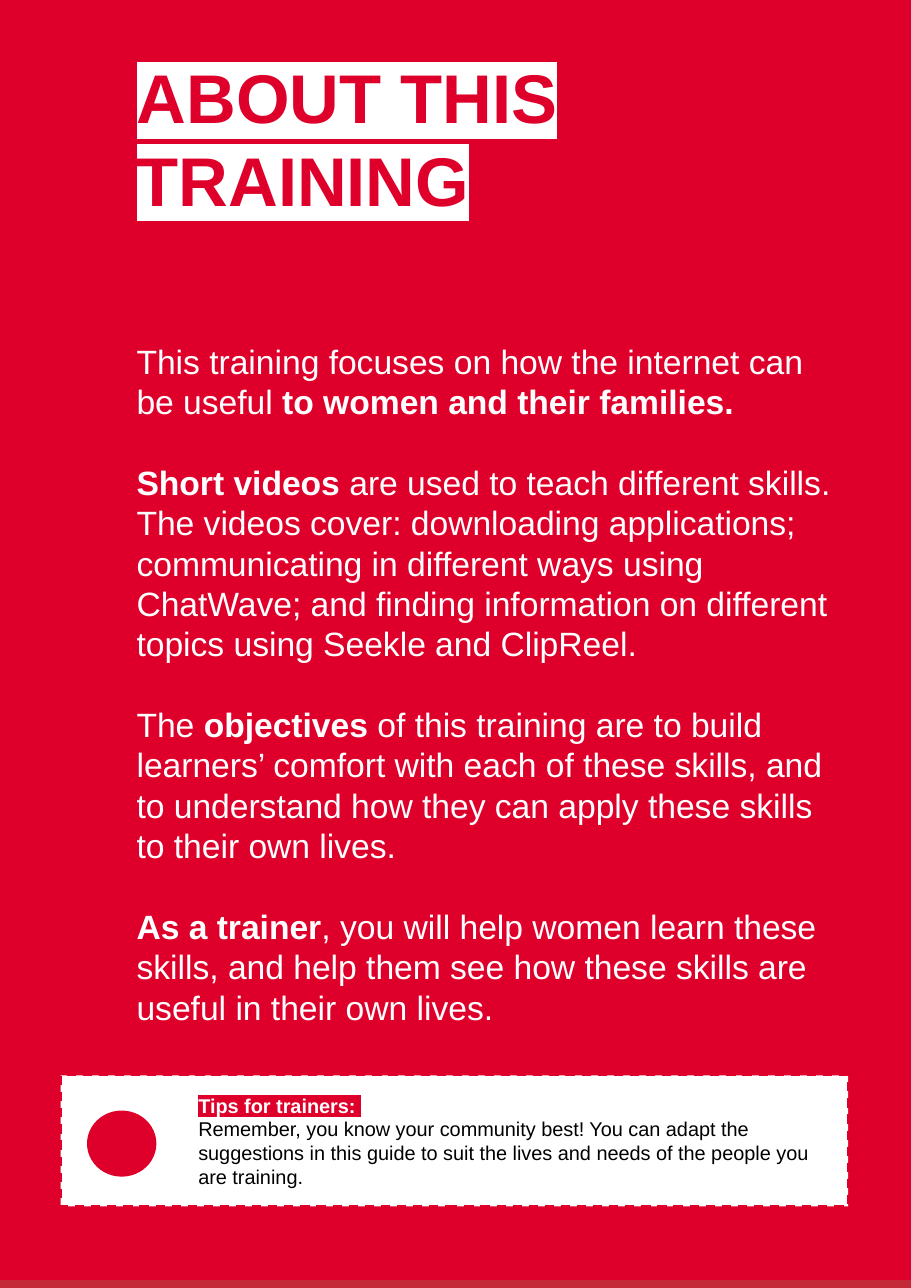
from lxml import etree
from pptx import Presentation
from pptx.dml.color import RGBColor
from pptx.enum.dml import MSO_LINE_DASH_STYLE as Dash
from pptx.enum.shapes import MSO_SHAPE as Shape
from pptx.enum.text import MSO_ANCHOR as Anchor, MSO_AUTO_SIZE as AutoSize, PP_ALIGN as Align
from pptx.oxml.ns import qn
from pptx.util import Pt

# Content: each paragraph is a list of (text, bold) pieces
TITLE = "ABOUT THIS TRAINING"
ABOUT = [
    [("This training focuses on how the internet can be useful ", False),
     ("to women and their families.", True)],
    [("Short videos", True),
     (" are used to teach different skills. The videos cover: downloading applications; "
      "communicating in different ways using ChatWave; and finding information on "
      "different topics using Seekle and ClipReel.", False)],
    [("The ", False), ("objectives", True),
     (" of this training are to build learners’ comfort with each of these skills, and to "
      "understand how they can apply these skills to their own lives.", False)],
    [("As a trainer", True),
     (", you will help women learn these skills, and help them see how these skills are "
      "useful in their own lives.", False)],
]
TIPS_LABEL = "Tips for trainers: "
TIPS = ("Remember, you know your community best! You can adapt the suggestions in this "
        "guide to suit the lives and needs of the people you are training.")


class Theme:
    font = "Arial"
    red, dark_red, white, black = "DE002B", "C42938", "FFFFFF", "000000"
    title, body, tips = 45, 22, 13
    body_gap = 26.4
    dash_width = 1.5


# Layout in px, 100 px to the inch
PX = 9144
PAGE_W, PAGE_H = 827, 1169
STRIP_H = 7
TEXT_X, TEXT_W = 115, 657
TITLE_Y, TITLE_H = 41, 170
ABOUT_Y, ABOUT_H = 300, 648
TIPS_BOX = (55, 976, 715, 119)
TIPS_DOT = (79, 1008, 63, 60)
TEXT_INSET, TIPS_INSET, TIPS_INDENT = 9, 11, 114


def color(value):
    return RGBColor.from_string(value)


def emu(*lengths):
    return [length * PX for length in lengths]


def set_insets(frame, inset):
    frame.word_wrap = True
    frame.margin_left = frame.margin_right = inset * PX
    frame.margin_top = frame.margin_bottom = inset * PX


def add_block(slide, kind, box, fill):
    block = slide.shapes.add_shape(kind, *emu(*box))
    block.shadow.inherit = False
    block.fill.solid()
    block.fill.fore_color.rgb = color(fill)
    block.line.fill.background()
    return block


def add_text_frame(slide, y, height):
    frame = slide.shapes.add_textbox(*emu(TEXT_X, y, TEXT_W, height)).text_frame
    set_insets(frame, TEXT_INSET)
    frame.auto_size = AutoSize.SHAPE_TO_FIT_TEXT
    return frame


def write(paragraph, pieces, size, ink):
    paragraph.alignment = Align.LEFT
    paragraph.font.name = Theme.font
    paragraph.font.size = Pt(size)
    paragraph.font.color.rgb = color(ink)
    for text, bold in pieces:
        run = paragraph.add_run()
        run.text = text
        run.font.bold = bold


def highlight(run, marker):
    mark = etree.SubElement(run.font._element, qn("a:highlight"))
    etree.SubElement(mark, qn("a:srgbClr"), val=marker)


def add_title(slide):
    heading = add_text_frame(slide, TITLE_Y, TITLE_H).paragraphs[0]
    write(heading, [(TITLE, True)], Theme.title, Theme.red)
    highlight(heading.runs[0], Theme.white)


def add_about(slide):
    frame = add_text_frame(slide, ABOUT_Y, ABOUT_H)
    for index, pieces in enumerate(ABOUT):
        paragraph = frame.add_paragraph() if index else frame.paragraphs[0]
        if index:
            paragraph.space_before = Pt(Theme.body_gap)
        write(paragraph, pieces, Theme.body, Theme.white)


def add_tips(slide):
    panel = add_block(slide, Shape.RECTANGLE, TIPS_BOX, Theme.white)
    panel.line.color.rgb = color(Theme.red)
    panel.line.width = Pt(Theme.dash_width)
    panel.line.dash_style = Dash.DASH
    frame = panel.text_frame
    set_insets(frame, TIPS_INSET)
    frame.vertical_anchor = Anchor.MIDDLE
    label, advice = frame.paragraphs[0], frame.add_paragraph()
    write(label, [(TIPS_LABEL, True)], Theme.tips, Theme.white)
    highlight(label.runs[0], Theme.red)
    write(advice, [(TIPS, False)], Theme.tips, Theme.black)
    for paragraph in (label, advice):
        properties = paragraph._p.get_or_add_pPr()
        properties.set("marL", str(TIPS_INDENT * PX))
        properties.set("indent", "0")
    add_block(slide, Shape.OVAL, TIPS_DOT, Theme.red)


def main():
    deck = Presentation()
    deck.slide_width, deck.slide_height = emu(PAGE_W, PAGE_H)
    slide = deck.slides.add_slide(deck.slide_layouts[6])
    strip_y = PAGE_H - STRIP_H
    add_block(slide, Shape.RECTANGLE, (0, 0, PAGE_W, strip_y), Theme.red)
    add_title(slide)
    add_about(slide)
    add_block(slide, Shape.RECTANGLE, (0, strip_y, PAGE_W, STRIP_H), Theme.dark_red)
    add_tips(slide)
    deck.save("out.pptx")


if __name__ == "__main__":
    main()
